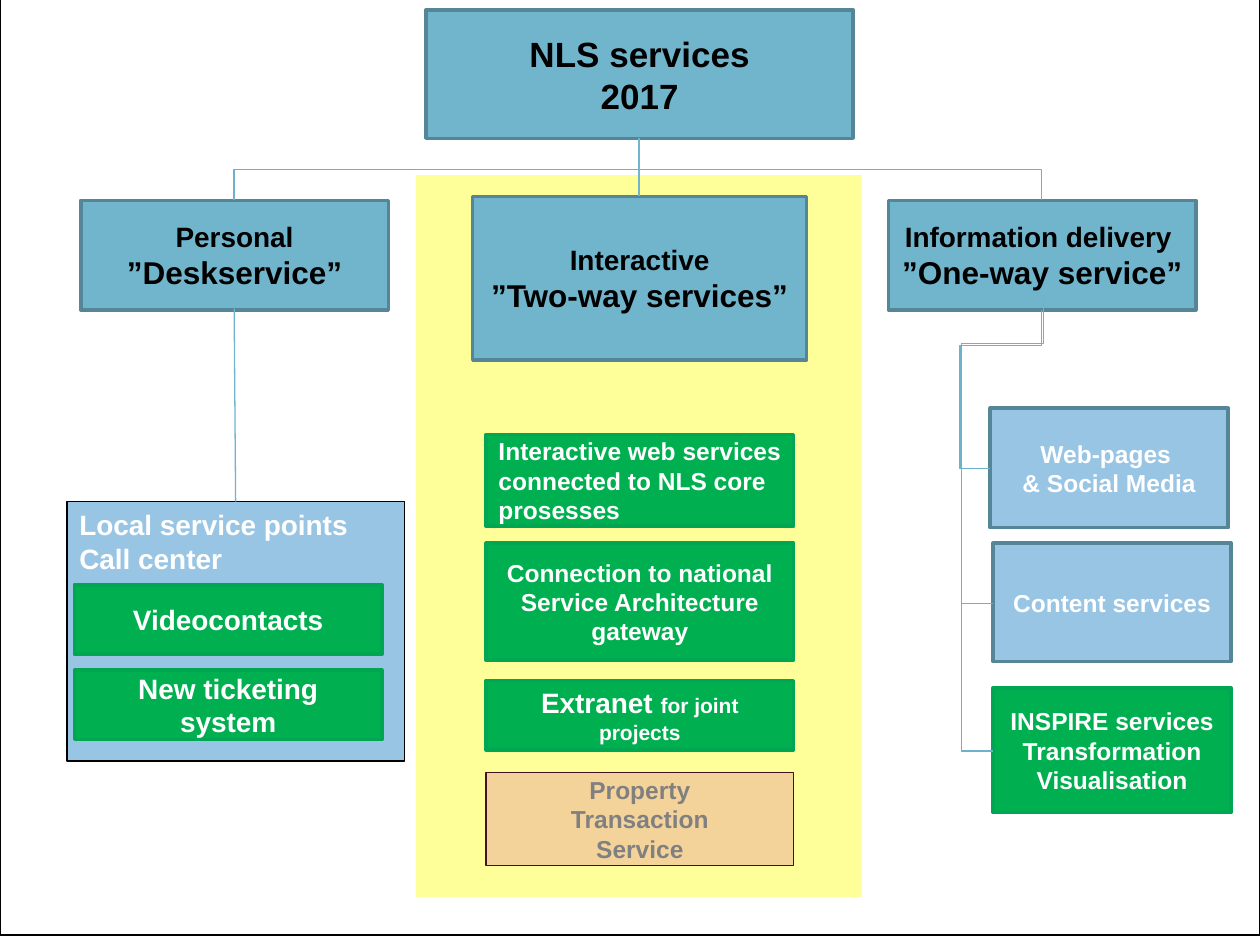
from lxml import etree
from pptx import Presentation
from pptx.dml.color import RGBColor
from pptx.enum.shapes import MSO_CONNECTOR as Link, MSO_SHAPE as Shape
from pptx.enum.text import MSO_ANCHOR as Anchor, PP_ALIGN as Align
from pptx.oxml.ns import qn
from pptx.util import Cm, Pt

COLOURS = {
    "white": "FFFFFF", "black": "000000", "grey": "808080",
    "teal": "71B5CC", "teal edge": "548697", "link": "6CB2CA",
    "blue": "0070C0", "green": "00B050", "green edge": "00A651",
    "yellow": "FFFF99", "pink": "E0819E", "plum": "461122",
}

# fill, opacity in percent, edge, edge width, text colour
STYLES = {
    "frame": ("white", 100, "black", 0.75, "black"),
    "band": ("yellow", 100, None, 0, "black"),
    "heading": ("teal", 100, "teal edge", 2, "black"),
    "current": ("blue", 40, "teal edge", 2, "white"),
    "group": ("blue", 40, "black", 0.75, "white"),
    "new": ("green", 100, "green edge", 2, "white"),
    "other": ("pink", 35, "plum", 0.75, "grey"),
}

# style, (left, top, width, height) in cm, paragraphs of (text, size) spans
BOXES = [
    ("frame", (0, -0.2, 25.4, 19.05), []),
    ("band", (8.38, 3.53, 8.99, 14.55), []),
    ("heading", (8.59, 0.2, 8.61, 2.59),
     [[("NLS services", 20)], [("2017", 20)]]),
    ("heading", (1.63, 4.04, 6.2, 2.21),
     [[("Personal ", 16), ("”Deskservice”", 18)]]),
    ("heading", (9.53, 3.96, 6.73, 3.3),
     [[("Interactive", 16)], [("”Two-way services”", 18)]]),
    ("heading", (17.91, 4.04, 6.2, 2.21),
     [[("Information delivery ", 16)], [("”One-way service” ", 18)]]),
    ("group", (1.35, 10.11, 6.81, 5.23),
     [[("Local service points", 16)], [("Call center", 16)]]),
    ("new", (1.5, 11.79, 6.2, 1.4), [[("Videocontacts", 16)]]),
    ("new", (1.5, 13.51, 6.2, 1.4), [[("New ticketing system", 16)]]),
    ("new", (9.8, 8.76, 6.2, 1.85),
     [[("Interactive web services connected to NLS core prosesses", 14)]]),
    ("new", (9.8, 10.95, 6.2, 2.36),
     [[("Connection to national Service Architecture gateway", 14)]]),
    ("new", (9.8, 13.72, 6.2, 1.4),
     [[("Extranet ", 16), ("for joint projects", 12)]]),
    ("other", (9.8, 15.57, 6.2, 1.88),
     [[("Property", 14)], [("Transaction", 14)], [("Service", 14)]]),
    ("current", (19.96, 8.23, 4.8, 2.41),
     [[("Web-pages ", 14)], [("& Social Media", 14)]]),
    ("current", (20.02, 10.95, 4.8, 2.39), [[("Content services", 14)]]),
    ("new", (20.02, 13.87, 4.8, 2.51),
     [[("INSPIRE services", 14)], [("Transformation", 14)],
      [("Visualisation", 14)]]),
]
LEFT_ALIGNED = ("Local service points", "Interactive web services")

ROOT = (12.88, 2.79)
# start, end, height of the turn, x of the side lane (None: no lane)
ELBOWS = [
    (ROOT, (4.72, 4.04), 3.42, None),
    (ROOT, (21, 4.04), 3.42, None),
    ((21, 6.25), (19.96, 9.45), 6.96, 19.35),
    ((21.03, 5.94), (20.02, 12.17), 6.93, 19.38),
    ((21, 6.25), (20.02, 15.14), 6.93, 19.38),
]
STRAIGHTS = [
    ((4.72, 6.22), (4.75, 10.11)),
    (ROOT, (12.88, 3.96)),
]


def colour(name):
    return RGBColor.from_string(COLOURS[name])


def set_opacity(shape, percent):
    tint = shape.fill._xPr.find(qn("a:solidFill"))[0]
    etree.SubElement(tint, qn("a:alpha"), val=str(percent * 1000))


def write_text(box, paragraphs, text_colour):
    frame = box.text_frame
    opening = paragraphs[0][0][0]
    frame.word_wrap = True
    frame.vertical_anchor = Anchor.MIDDLE
    align = Align.LEFT if opening.startswith(LEFT_ALIGNED) else Align.CENTER
    for number, spans in enumerate(paragraphs):
        para = frame.add_paragraph() if number else frame.paragraphs[0]
        para.alignment = align
        for text, size in spans:
            span = para.add_run()
            span.text = text
            span.font.color.rgb = colour(text_colour)
            look = {"name": "Arial", "size": Pt(size), "bold": True}
            for key, value in look.items():
                setattr(span.font, key, value)


def add_box(page, style, place, paragraphs):
    fill, opacity, edge, width, text_colour = STYLES[style]
    box = page.shapes.add_shape(Shape.RECTANGLE, *map(Cm, place))
    box.shadow.inherit = False
    box.fill.solid()
    box.fill.fore_color.rgb = colour(fill)
    if opacity < 100:
        set_opacity(box, opacity)
    if edge:
        box.line.color.rgb = colour(edge)
        box.line.width = Pt(width)
    else:
        box.line.fill.background()
    if paragraphs:
        write_text(box, paragraphs, text_colour)
    if style == "group":
        box.text_frame.vertical_anchor = Anchor.TOP


def add_link(page, kind, start, end, line_colour):
    link = page.shapes.add_connector(kind, *map(Cm, start + end))
    link.line.color.rgb = colour(line_colour)
    link.line.width = Pt(0.75)
    etree.SubElement(link.element.spPr, qn("a:effectLst"))
    return link


def add_elbow(page, start, end, turn, lane):
    """Draw a link that leaves downwards: a level elbow, turned a quarter."""
    (x1, y1), (x2, y2) = start, end
    length, spread = y2 - y1, abs(x2 - x1)
    left = (x1 + x2 - length) / 2
    top = (y1 + y2 - spread) / 2
    link = add_link(page, Link.ELBOW, (left, top),
                    (left + length, top + spread), "link")
    link.rotation = 90
    properties = link.element.spPr
    frame = properties.find(qn("a:xfrm"))
    frame.set("rot", "5400000" if x2 < x1 else "16200000")
    if x2 > x1:
        frame.set("flipH", "1")
    ratios = [(turn - y1) / length]
    if lane is not None:
        ratios.append((x1 - lane) / spread)
    geometry = properties.find(qn("a:prstGeom"))
    geometry.set("prst", f"bentConnector{len(ratios) + 2}")
    guides = geometry.find(qn("a:avLst"))
    for number, ratio in enumerate(ratios, 1):
        etree.SubElement(guides, qn("a:gd"), name=f"adj{number}",
                         fmla=f"val {round(ratio * 100000)}")


def main():
    deck = Presentation()
    deck.slide_width, deck.slide_height = Cm(25.4), Cm(19.05)
    page = deck.slides.add_slide(deck.slide_layouts[6])
    for box in BOXES:
        add_box(page, *box)
    for elbow in ELBOWS:
        add_elbow(page, *elbow)
    for start, end in STRAIGHTS:
        add_link(page, Link.STRAIGHT, start, end, "teal")
    deck.save("out.pptx")


if __name__ == "__main__":
    main()
